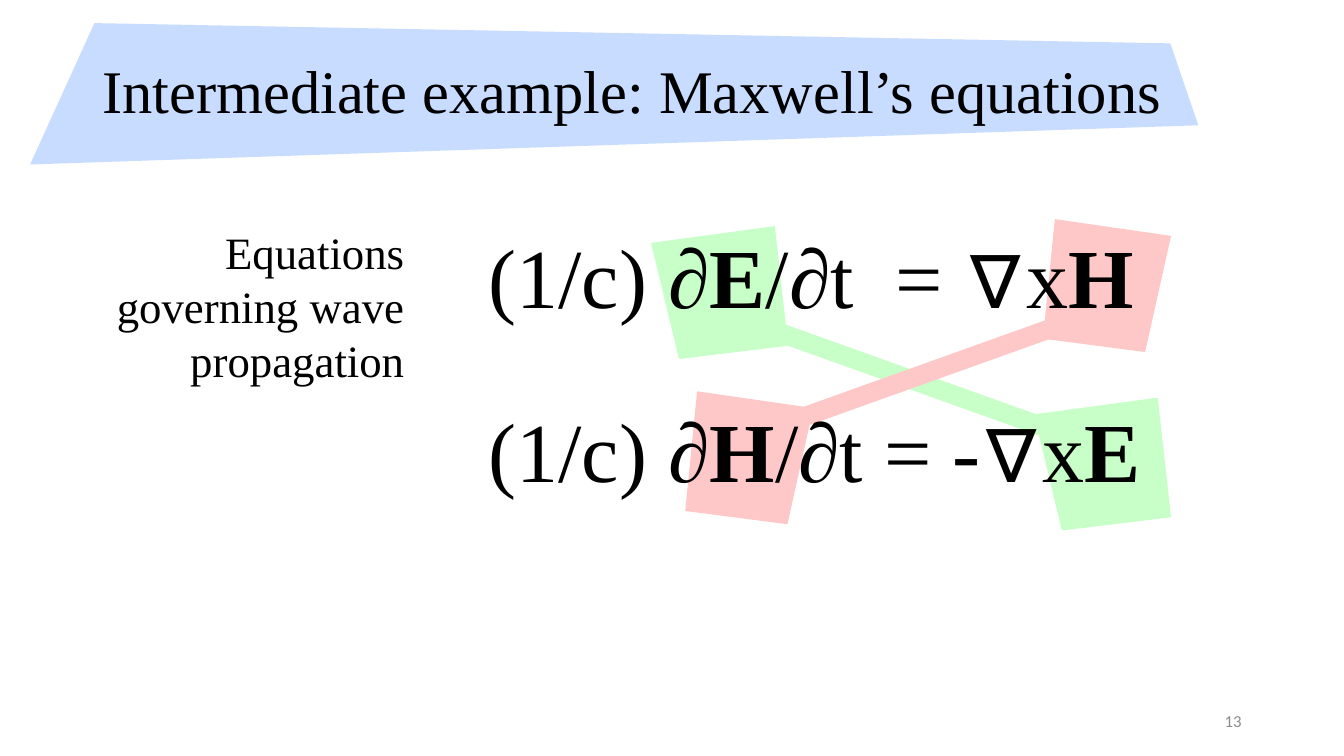
from pptx import Presentation
from pptx import util as u
from pptx.dml.color import RGBColor
from pptx.enum import shapes, text

GREEN, RED, BLUE = "C8FFC8", "FFC8C8", "C8DCFF"
BLACK, GREY = "000000", "8C8C8C"
SERIF = "Times New Roman"

presentation = Presentation()
presentation.slide_width, presentation.slide_height = u.Pt(960), u.Pt(540)
slide = presentation.slides.add_slide(presentation.slide_layouts[6])


def paint(shape, color):
    shape.fill.solid()
    shape.fill.fore_color.rgb = RGBColor.from_string(color)
    shape.line.fill.background()
    shape.shadow.inherit = False


def add_text(box, runs, size, color=BLACK, align=text.PP_ALIGN.LEFT, wrap=True):
    """Add a one-paragraph text box; runs are (wording, font, bold)."""
    frame = slide.shapes.add_textbox(*[u.Pt(length) for length in box]).text_frame
    frame.word_wrap = wrap
    paragraph = frame.paragraphs[0]
    paragraph.alignment = align
    for wording, font, bold in runs:
        run = paragraph.add_run()
        run.text = wording
        run.font.name, run.font.size, run.font.bold = font, u.Pt(size), bold
        run.font.color.rgb = RGBColor.from_string(color)
    return frame


# Highlights: both patches of a field, then the bar that joins them
green_patch = [(88.5, 0), (0, 12), (20, 95), (98, 85.5)]
red_patch = [(8.5, 0), (91.5, 12), (73, 95), (0, 85.5)]
highlights = [
    (GREEN, green_patch, [(465, 161.5), (738.5, 284)], (514, 262, 260.5, 13.7), 19.7),
    (RED, red_patch, [(745, 156.5), (489.5, 279.5)], (547, 257, 244, 13.7), 340.3),
]
banner = [(67.5, 16.5), (836, 31), (856, 89.5), (21.5, 117.5)]
outlines = []
for color, patch, origins, bar_box, angle in highlights:
    for left, top in origins:
        outlines.append((color, [(left + x, top + y) for x, y in patch], None, 0))
    outlines.append((color, None, bar_box, angle))
outlines.append((BLUE, banner, None, 0))

for color, corners, bar_box, angle in outlines:
    if corners:
        points = [(u.Pt(x), u.Pt(y)) for x, y in corners]
        builder = slide.shapes.build_freeform(*points[0])
        builder.add_line_segments(points[1:], close=True)
        shape = builder.convert_to_shape()
    else:
        shape = slide.shapes.add_shape(
            shapes.MSO_SHAPE.RECTANGLE, *[u.Pt(length) for length in bar_box])
        shape.rotation = angle
    paint(shape, color)

title = add_text((66, 29, 790, 76),
                 [("Intermediate example: Maxwell’s equations", SERIF, False)], 43.2)
title.vertical_anchor = text.MSO_ANCHOR.MIDDLE
title.paragraphs[0].line_spacing = 0.9

equations = [
    (157, 478, "E", "/∂t  = ", "H"),
    (281, 483, "H", "/∂t = -", "E"),
]
for top, width, changing, middle, curled in equations:
    add_text((342, top, width, 80), [
        ("(1/c) ∂", SERIF, False),
        (changing, SERIF, True),
        (middle, SERIF, False),
        ("∇", "Arial", False),
        ("x", SERIF, False),
        (curled, SERIF, True),
    ], 60, wrap=False)

add_text((66, 157, 230, 124),
         [("Equations governing wave propagation", SERIF, False)],
         32, align=text.PP_ALIGN.RIGHT)

page_number = add_text((843, 500.5, 51, 29), [("13", "Calibri", False)],
                       12, GREY, text.PP_ALIGN.RIGHT)
page_number.vertical_anchor = text.MSO_ANCHOR.MIDDLE

presentation.save("out.pptx")
